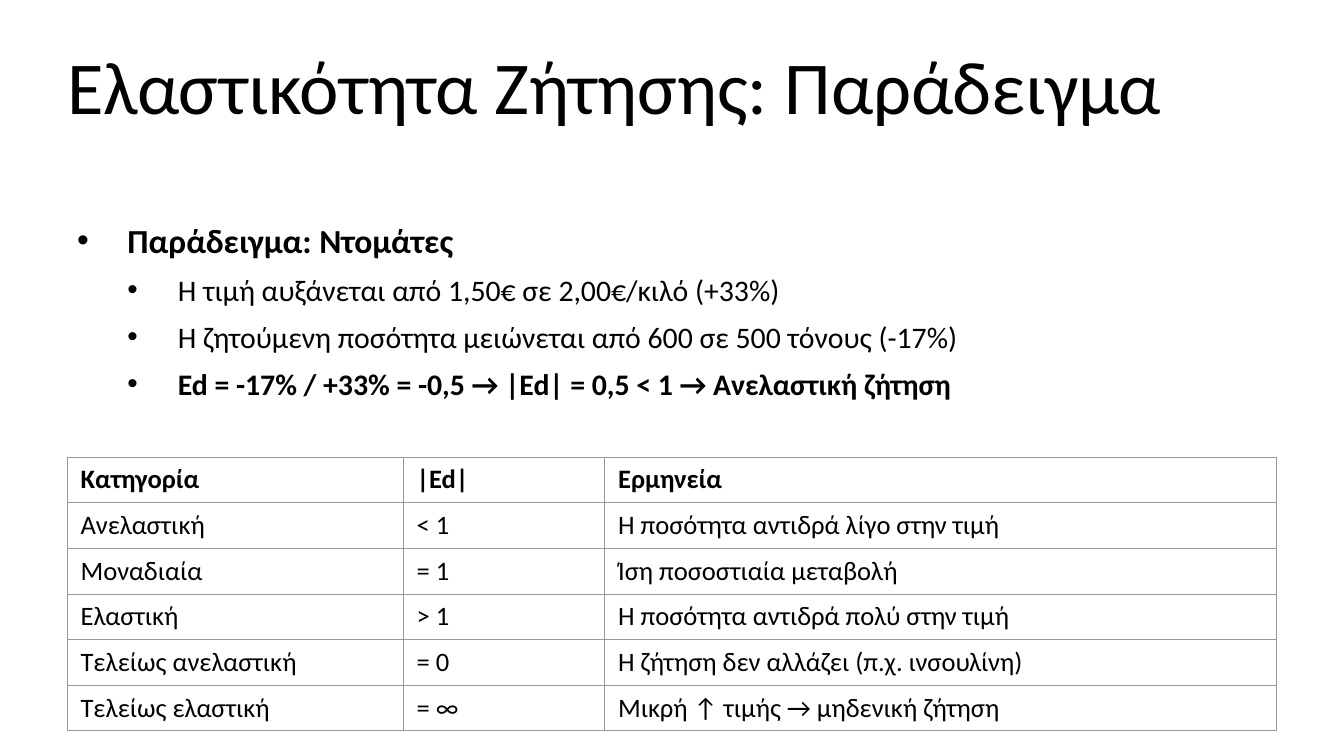
from typing import NamedTuple

from pptx import Presentation
from pptx.dml.color import RGBColor
from pptx.enum.text import MSO_ANCHOR, MSO_AUTO_SIZE, PP_ALIGN
from pptx.oxml.ns import qn
from pptx.util import Pt
from lxml.etree import SubElement

FONT = "Calibri"
BLACK = "000000"
GRID_GREY = "999999"
LEFT, WIDTH = 48, 864
INDENT = 36
ROW_HEIGHT = 32.6


class Point(NamedTuple):
    text: str
    level: int
    size: float
    bold: bool


class Category(NamedTuple):
    name: str
    elasticity: str
    meaning: str


POINTS = [
    Point("Παράδειγμα: Ντομάτες", 0, 24, True),
    Point("Η τιμή αυξάνεται από 1,50€ σε 2,00€/κιλό (+33%)", 1, 21.3, False),
    Point("Η ζητούμενη ποσότητα μειώνεται από 600 σε 500 τόνους (-17%)", 1, 21.3, False),
    Point("Ed = -17% / +33% = -0,5 → |Ed| = 0,5 < 1 → Ανελαστική ζήτηση", 1, 21.3, True),
]
CATEGORIES = [
    Category("Κατηγορία", "|Ed|", "Ερμηνεία"),
    Category("Ανελαστική", "< 1", "Η ποσότητα αντιδρά λίγο στην τιμή"),
    Category("Μοναδιαία", "= 1", "Ίση ποσοστιαία μεταβολή"),
    Category("Ελαστική", "> 1", "Η ποσότητα αντιδρά πολύ στην τιμή"),
    Category("Τελείως ανελαστική", "= 0", "Η ζήτηση δεν αλλάζει (π.χ. ινσουλίνη)"),
    Category("Τελείως ελαστική", "= ∞", "Μικρή ↑ τιμής → μηδενική ζήτηση"),
]
COLUMN_WIDTHS = [240, 144, 480]


def color(value: str) -> RGBColor:
    return RGBColor.from_string(value)


def format_runs(paragraph, size: float, bold: bool = False) -> None:
    for run in paragraph.runs:
        run.font.name = FONT
        run.font.size = Pt(size)
        run.font.bold = bold
        run.font.color.rgb = color(BLACK)


def add_title(slide, text: str) -> None:
    title = slide.shapes.title
    title.left, title.top, title.width, title.height = Pt(LEFT), Pt(28.8), Pt(WIDTH), Pt(115.2)
    frame = title.text_frame
    frame.text = text
    frame.auto_size = MSO_AUTO_SIZE.NONE
    frame.vertical_anchor = MSO_ANCHOR.TOP
    frame.margin_left = frame.margin_right = frame.margin_top = frame.margin_bottom = 0
    frame.paragraphs[0].alignment = PP_ALIGN.LEFT
    format_runs(frame.paragraphs[0], 53.3)


def set_bullet(paragraph, level: int) -> None:
    """Give the paragraph a round bullet with a hanging indent."""
    properties = paragraph._p.get_or_add_pPr()
    properties.set("marL", str(Pt(INDENT * (level + 1))))
    properties.set("indent", str(Pt(-INDENT)))
    SubElement(properties, qn("a:buFont"), typeface="Arial")
    SubElement(properties, qn("a:buChar"), char="•")


def add_points(slide, points: list[Point]) -> None:
    body = slide.shapes.add_textbox(Pt(LEFT), Pt(153.6), Pt(WIDTH), Pt(192))
    frame = body.text_frame
    frame.word_wrap = True
    for index, point in enumerate(points):
        paragraph = frame.add_paragraph() if index else frame.paragraphs[0]
        paragraph.text = point.text
        set_bullet(paragraph, point.level)
        paragraph.level = point.level
        paragraph.alignment = PP_ALIGN.JUSTIFY
        paragraph.space_after = Pt(8)
        format_runs(paragraph, point.size, point.bold)


def set_borders(cell) -> None:
    properties = cell._tc.get_or_add_tcPr()
    for side in ("lnL", "lnR", "lnT", "lnB"):
        line = SubElement(properties, qn(f"a:{side}"), w=str(Pt(0.5)))
        fill = SubElement(line, qn("a:solidFill"))
        SubElement(fill, qn("a:srgbClr"), val=GRID_GREY)


def add_categories(slide, categories: list[Category]) -> None:
    table = slide.shapes.add_table(
        len(categories), len(COLUMN_WIDTHS),
        Pt(LEFT), Pt(326.4), Pt(WIDTH), Pt(ROW_HEIGHT * len(categories)),
    ).table
    table.first_row = table.horz_banding = False
    for column, width in zip(table.columns, COLUMN_WIDTHS):
        column.width = Pt(width)
    for row_index, category in enumerate(categories):
        table.rows[row_index].height = Pt(ROW_HEIGHT)
        for column_index, text in enumerate(category):
            cell = table.cell(row_index, column_index)
            cell.text = text
            cell.margin_left = cell.margin_right = Pt(9.6)
            cell.margin_top = cell.margin_bottom = Pt(4.8)
            set_borders(cell)
            cell.fill.background()
            format_runs(cell.text_frame.paragraphs[0], 19, bold=row_index == 0)


def main() -> None:
    deck = Presentation()
    deck.slide_width, deck.slide_height = Pt(960), Pt(540)
    slide = deck.slides.add_slide(deck.slide_layouts.get_by_name("Title Only"))
    add_title(slide, "Ελαστικότητα Ζήτησης: Παράδειγμα")
    add_points(slide, POINTS)
    add_categories(slide, CATEGORIES)
    deck.save("out.pptx")


if __name__ == "__main__":
    main()
